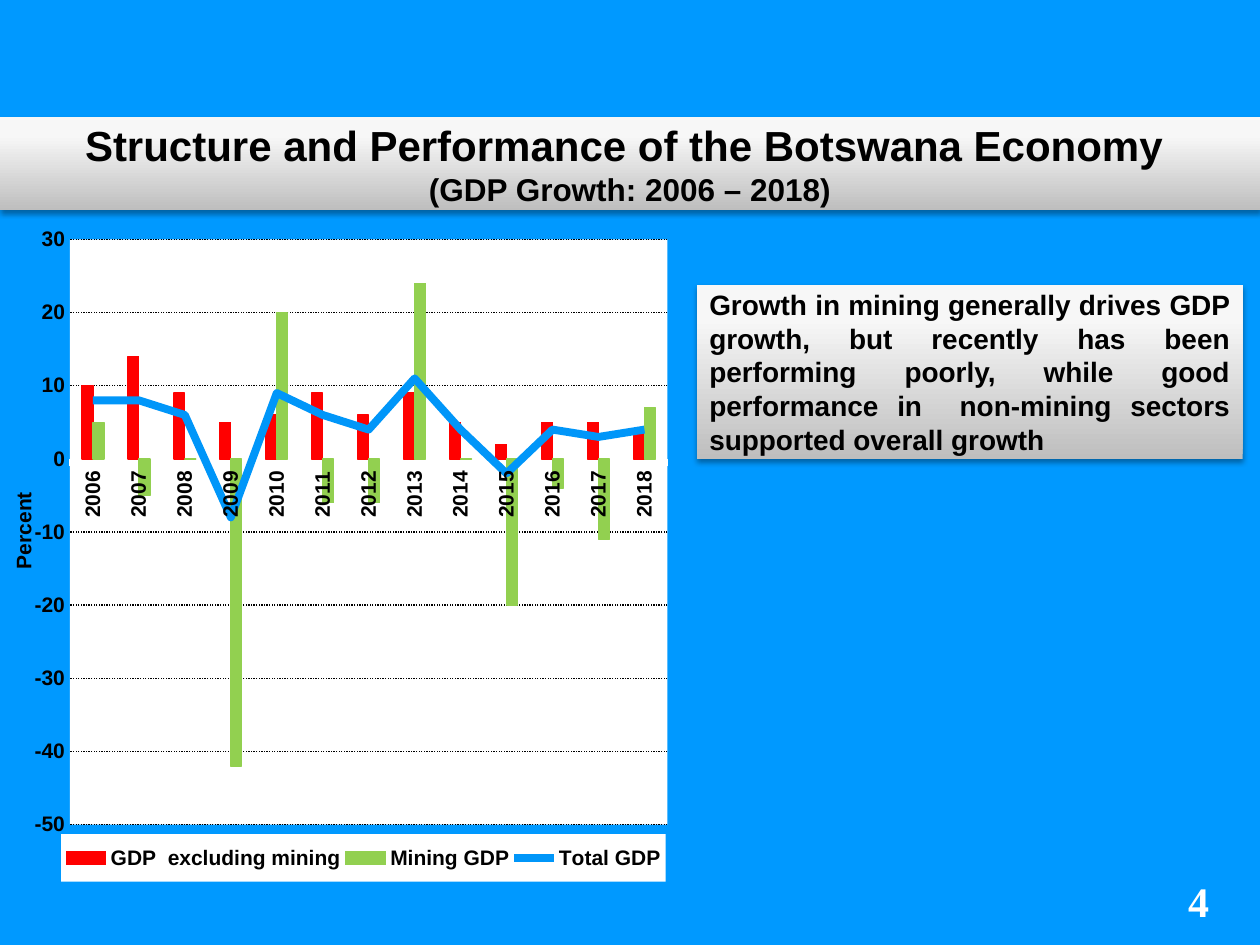
"""Build the slide on GDP growth in Botswana."""
from dataclasses import dataclass

from pptx import Presentation, util as u
from pptx.chart.data import CategoryChartData
from pptx.dml.color import RGBColor
from pptx.enum import chart as ch, dml, shapes, text
from pptx.oxml import parse_xml
from pptx.oxml.ns import nsdecls, qn

BLUE = RGBColor(0x00, 0x99, 0xFF)
LINE = RGBColor(0x00, 0x96, 0xF9)
RED = RGBColor(0xFF, 0x00, 0x00)
GREEN = RGBColor(0x92, 0xD0, 0x50)
BLACK = RGBColor(0x00, 0x00, 0x00)
WHITE = RGBColor(0xFF, 0xFF, 0xFF)
SILVER = RGBColor(0xBE, 0xBE, 0xBE)
PALE = RGBColor(0xF7, 0xF7, 0xF7)
LIGHT = RGBColor(0xF8, 0xF8, 0xF8)
STOPS = ((0, SILVER), (80, PALE), (100, LIGHT))


@dataclass
class Box:
    left: float
    top: float
    width: float
    height: float

    def cm(self) -> list:
        return [u.Cm(n) for n in (self.left, self.top, self.width, self.height)]


@dataclass
class Series:
    name: str
    color: RGBColor
    width: float
    vals: tuple


@dataclass
class Para:
    words: str
    size: int
    align: int
    color: RGBColor = BLACK
    face: str = "Arial"


DATA = (
    Series("GDP  excluding mining", RED, 0.75,
           (10, 14, 9, 5, 6, 9, 6, 9, 5, 2, 5, 5, 4)),
    Series("Mining GDP", GREEN, 0.75,
           (5, -5, 0, -42, 20, -6, -6, 24, 0, -20, -4, -11, 7)),
    Series("Total GDP", LINE, 4.5,
           (8, 8, 6, -8, 9, 6, 4, 11, 4, -2, 4, 3, 4)),
)
HEAD = (
    Para("Structure and Performance of the Botswana Economy ", 24, text.PP_ALIGN.CENTER),
    Para("(GDP Growth: 2006 – 2018)", 18, text.PP_ALIGN.CENTER),
)
NOTE = (Para(
    "Growth in mining generally drives GDP growth, but recently has been "
    "performing poorly, while good performance in  non-mining sectors "
    "supported overall growth", 16, text.PP_ALIGN.JUSTIFY),)
PAGE = (Para("4", 24, text.PP_ALIGN.LEFT, WHITE, "Times New Roman"),)


def style(font, size: float, color: RGBColor = BLACK, face: str = "Arial") -> None:
    font.size, font.name, font.bold = u.Pt(size), face, True
    font.color.rgb = color


def write(frame, paras: tuple) -> None:
    frame.word_wrap = True
    frame.auto_size = text.MSO_AUTO_SIZE.NONE
    for i, item in enumerate(paras):
        para = frame.add_paragraph() if i else frame.paragraphs[0]
        para.text, para.alignment = item.words, item.align
        style(para.font, item.size, item.color, item.face)


def panel(shape, box: Box, paras: tuple) -> None:
    shape.left, shape.top, shape.width, shape.height = box.cm()
    stops = "".join(f'<a:gs pos="{pos * 1000}"><a:srgbClr val="{rgb}"/></a:gs>'
                    for pos, rgb in STOPS)
    props = shape._element.spPr
    props.append(parse_xml(
        f'<a:gradFill {nsdecls("a")} rotWithShape="1"><a:gsLst>{stops}</a:gsLst>'
        '<a:lin ang="16200000" scaled="0"/></a:gradFill>'))
    props.append(parse_xml(
        f'<a:effectLst {nsdecls("a")}><a:outerShdw blurRad="40000" dist="23000" '
        'dir="5400000" rotWithShape="0"><a:srgbClr val="000000">'
        '<a:alpha val="35000"/></a:srgbClr></a:outerShdw></a:effectLst>'))
    shape.line.fill.background()
    shape.text_frame.vertical_anchor = text.MSO_ANCHOR.MIDDLE
    write(shape.text_frame, paras)


def place(node, index: int, inner: bool = False, **spots: float) -> None:
    for old in node.findall(qn("c:layout")):
        node.remove(old)
    target = '<c:layoutTarget val="inner"/>' if inner else ""
    modes = "".join(f'<c:{k}Mode val="edge"/>' for k in "xy")
    sizes = "".join(f'<c:{k} val="{v}"/>' for k, v in spots.items())
    node.insert(index, parse_xml(
        f'<c:layout {nsdecls("c")}><c:manualLayout>{target}{modes}{sizes}'
        '</c:manualLayout></c:layout>'))


def white():
    return parse_xml(f'<c:spPr {nsdecls("c", "a")}><a:solidFill>'
                     f'<a:srgbClr val="{WHITE}"/></a:solidFill></c:spPr>')


def combine(chart) -> None:
    bars = chart.plots[0]._element
    ser = bars.findall(qn("c:ser"))[-1]
    for flag in ser.findall(qn("c:invertIfNegative")):
        ser.remove(flag)
    ids = "".join(f'<c:axId val="{n.get("val")}"/>' for n in bars.findall(qn("c:axId")))
    line = parse_xml(
        f'<c:lineChart {nsdecls("c")}><c:grouping val="standard"/>'
        f'<c:varyColors val="0"/><c:marker val="1"/>{ids}</c:lineChart>')
    line.insert(2, ser)
    bars.addnext(line)


def paint(chart) -> None:
    bars, line = chart.plots
    bars.gap_width, bars.overlap = 219, 0
    bars.vary_by_categories = False
    for ser, item in zip([*bars.series, *line.series], DATA):
        ser.format.line.color.rgb = item.color
        ser.format.line.width = u.Pt(item.width)
    for ser, item in zip(bars.series, DATA):
        ser.format.fill.solid()
        ser.format.fill.fore_color.rgb = item.color
        ser.invert_if_negative = False
    total = line.series[0]
    total.smooth = False
    total.marker.style = ch.XL_MARKER_STYLE.NONE


def scale(chart) -> None:
    cat, val = chart.category_axis, chart.value_axis
    for axis in (cat, val):
        style(axis.tick_labels.font, 12)
    cat.format.line.color.rgb = WHITE
    cat.format.line.width = u.Pt(0.75)
    cat.major_tick_mark = ch.XL_TICK_MARK.OUTSIDE
    cat._element.txPr.find(qn("a:bodyPr")).set("rot", "-5400000")
    val.minimum_scale, val.maximum_scale, val.major_unit = -50, 30, 10
    val.major_tick_mark = ch.XL_TICK_MARK.NONE
    val.tick_labels.number_format = "0"
    val.tick_labels.number_format_is_linked = False
    val.format.line.fill.background()
    grid = val.major_gridlines.format.line
    grid.color.rgb, grid.width = BLACK, u.Pt(0.75)
    grid.dash_style = dml.MSO_LINE.ROUND_DOT
    name = val.axis_title
    name.text_frame.text = "Percent"
    style(name.text_frame.paragraphs[0].font, 12)
    name.text_frame._txBody.find(qn("a:bodyPr")).set("rot", "-5400000")
    place(name._element, 1, x=0.01, y=0.41)


def graph(slide, box: Box) -> None:
    data = CategoryChartData(number_format="0")
    data.categories = [str(year) for year in range(2006, 2019)]
    for item in DATA:
        data.add_series(item.name, item.vals)
    chart = slide.shapes.add_chart(
        ch.XL_CHART_TYPE.COLUMN_CLUSTERED, *box.cm(), data).chart
    chart.has_title = False
    chart.font.size, chart.font.name = u.Pt(10), "Arial"
    chart.font.color.rgb = WHITE
    combine(chart)
    paint(chart)
    scale(chart)
    area = chart._chartSpace.chart.plotArea
    place(area, 0, True, x=0.103, y=0.043, w=0.88, h=0.863)
    area.append(white())
    chart.has_legend = True
    key = chart.legend
    key.position = ch.XL_LEGEND_POSITION.BOTTOM
    key.include_in_layout = False
    style(key.font, 12)
    place(key._element, 1, x=0.09, y=0.92, w=0.89, h=0.07)
    key._element.find(qn("c:txPr")).addprevious(white())


def main() -> None:
    deck = Presentation()
    deck.slide_width, deck.slide_height = u.Cm(25.4), u.Cm(19.05)
    slide = deck.slides.add_slide(deck.slide_layouts[5])
    slide.background.fill.solid()
    slide.background.fill.fore_color.rgb = BLUE
    graph(slide, Box(0, 4.24, 13.69, 13.67))
    panel(slide.shapes.title, Box(0, 2.36, 25.4, 1.88), HEAD)
    spot = Box(14.05, 5.74, 11, 3.51)
    note = slide.shapes.add_shape(shapes.MSO_SHAPE.RECTANGLE, *spot.cm())
    panel(note, spot, NOTE)
    page = slide.shapes.add_textbox(*Box(23.7, 17.53, 1.7, 1.27).cm())
    write(page.text_frame, PAGE)
    deck.save("out.pptx")


if __name__ == "__main__":
    main()
